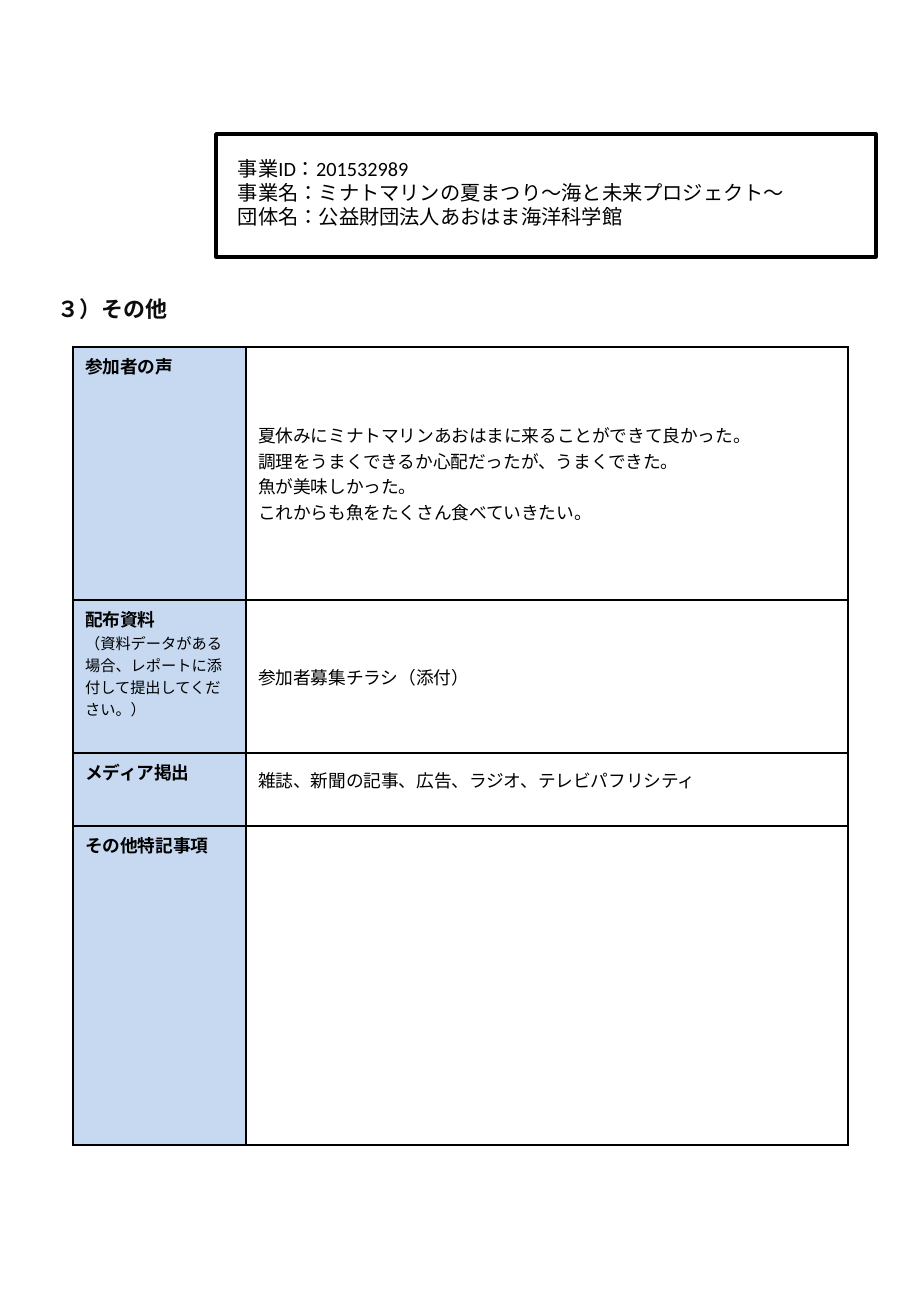
from dataclasses import dataclass

from lxml.etree import SubElement
from pptx import Presentation
from pptx.dml.color import RGBColor
from pptx.enum.lang import MSO_LANGUAGE_ID
from pptx.enum.shapes import MSO_SHAPE
from pptx.enum.text import MSO_ANCHOR
from pptx.oxml.ns import qn
from pptx.util import Emu, Pt

PX_PER_INCH = 121.5
FONT = "Calibri"
BLACK = RGBColor(0x00, 0x00, 0x00)
HEADING = RGBColor(0x0D, 0x0D, 0x0D)
LABEL_FILL = RGBColor(0xC6, 0xD9, 0xF1)
WHITE = RGBColor(0xFF, 0xFF, 0xFF)


@dataclass(frozen=True)
class Line:
    text: str
    size: float = 10.5
    bold: bool = False
    color: RGBColor = BLACK
    spacing: float | None = None


@dataclass(frozen=True)
class Row:
    height: int
    label: str
    note: str = ""
    answers: tuple[str, ...] = ()
    raise_by: int = 0


COLUMN_WIDTHS = (173, 602)
ROWS = (
    Row(253, "参加者の声", answers=(
        "夏休みにミナトマリンあおはまに来ることができて良かった。",
        "調理をうまくできるか心配だったが、うまくできた。",
        "魚が美味しかった。",
        "これからも魚をたくさん食べていきたい。",
    )),
    Row(153, "配布資料",
        note="（資料データがある場合、レポートに添付して提出してください。）",
        answers=("参加者募集チラシ（添付）",)),
    Row(73, "メディア掲出",
        answers=("雑誌、新聞の記事、広告、ラジオ、テレビパフリシティ",), raise_by=10),
    Row(319, "その他特記事項"),
)
PROJECT_LINES = (
    "事業ID：201532989",
    "事業名：ミナトマリンの夏まつり～海と未来プロジェクト～",
    "団体名：公益財団法人あおはま海洋科学館",
)


def px(length: int) -> Emu:
    return Emu(round(length * 914400 / PX_PER_INCH))


def write_lines(tf, lines: list[Line]) -> None:
    for i, line in enumerate(lines):
        p = tf.paragraphs[0] if i == 0 else tf.add_paragraph()
        r = p.add_run()
        r.text = line.text
        r.font.language_id = MSO_LANGUAGE_ID.JAPANESE
        p.font.name = FONT
        p.font.size = Pt(line.size)
        p.font.bold = line.bold
        p.font.color.rgb = line.color
        if line.spacing:
            p.line_spacing = Pt(line.spacing)


def add_text(slide, left: int, top: int, width: int, height: int,
             lines: list[Line], anchor: MSO_ANCHOR) -> None:
    tf = slide.shapes.add_textbox(px(left), px(top), px(width), px(height)).text_frame
    tf.word_wrap = True
    tf.vertical_anchor = anchor
    write_lines(tf, lines)


def style_cell(cell, fill: RGBColor) -> None:
    """Draw thin black borders on all sides, then fill the cell."""
    tc_pr = cell._tc.get_or_add_tcPr()
    for side in ("lnL", "lnR", "lnT", "lnB"):
        ln = SubElement(tc_pr, qn(f"a:{side}"), w=str(Pt(1)))
        solid = SubElement(ln, qn("a:solidFill"))
        SubElement(solid, qn("a:srgbClr"), val=str(BLACK))
    cell.fill.solid()
    cell.fill.fore_color.rgb = fill


def add_report_table(slide, left: int, top: int) -> None:
    height = sum(row.height for row in ROWS)
    table = slide.shapes.add_table(len(ROWS), len(COLUMN_WIDTHS), px(left), px(top),
                                   px(sum(COLUMN_WIDTHS)), px(height)).table
    table.first_row = False
    table.horz_banding = False
    for column, width in zip(table.columns, COLUMN_WIDTHS):
        column.width = px(width)
    for i, row in enumerate(ROWS):
        table.rows[i].height = px(row.height)
        label, answer = table.cell(i, 0), table.cell(i, 1)
        style_cell(label, LABEL_FILL)
        style_cell(answer, WHITE)
        label_lines = [Line(row.label, bold=True)]
        if row.note:
            label_lines.append(Line(row.note, size=9))
        write_lines(label.text_frame, label_lines)
        answer.vertical_anchor = MSO_ANCHOR.MIDDLE
        answer.margin_bottom += px(2 * row.raise_by)
        write_lines(answer.text_frame, [Line(text) for text in row.answers])


def add_frame(slide, left: int, top: int, width: int, height: int) -> None:
    sp = slide.shapes.add_shape(MSO_SHAPE.RECTANGLE, px(left), px(top), px(width), px(height))
    sp.shadow.inherit = False
    sp.fill.background()
    sp.line.color.rgb = BLACK
    sp.line.width = Pt(2)


def main() -> None:
    prs = Presentation()
    prs.slide_width, prs.slide_height = px(911), px(1316)
    slide = prs.slides.add_slide(prs.slide_layouts[6])
    add_report_table(slide, 73, 347)
    add_text(slide, 46, 290, 411, 38,
             [Line("３）その他", size=13, bold=True, color=HEADING)], MSO_ANCHOR.MIDDLE)
    add_text(slide, 226, 151, 618, 86,
             [Line(text, size=12, spacing=14.2) for text in PROJECT_LINES], MSO_ANCHOR.TOP)
    add_frame(slide, 216, 134, 660, 123)
    prs.save("out.pptx")


if __name__ == "__main__":
    main()
